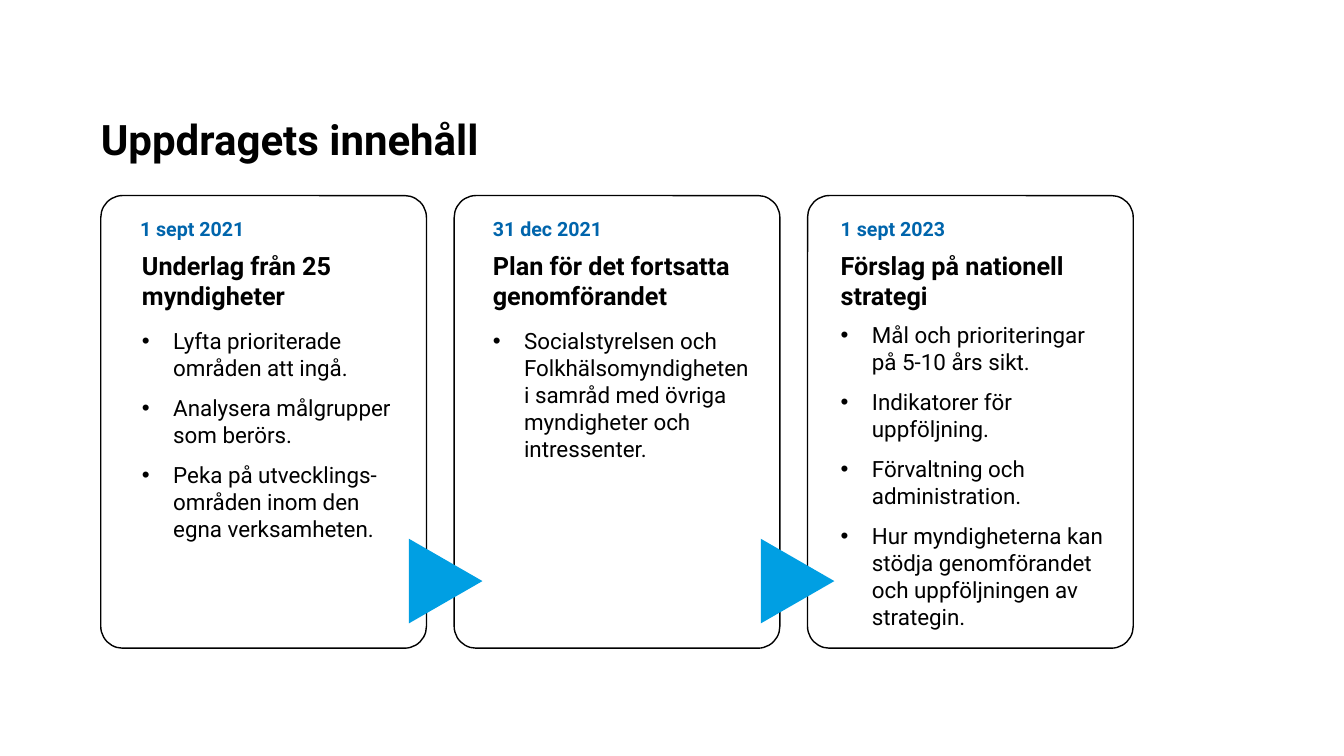
import pptx
import pptx.util
from lxml import etree
from pptx.dml.color import RGBColor
from pptx.enum.shapes import MSO_SHAPE
from pptx.enum.text import MSO_ANCHOR
from pptx.oxml.ns import qn
from pptx.util import Inches, Pt

# Content
TITLE = "Uppdragets innehåll"
STAGES = [
    {
        "date": "1 sept 2021", "date_left": 1.29,
        "heading": "Underlag från 25\nmyndigheter", "text_left": 1.31,
        "points": ["Lyfta prioriterade områden att ingå.",
                   "Analysera målgrupper som berörs.",
                   "Peka på utvecklings-områden inom den egna verksamheten."],
        "points_box": (3.2, 2.68, 2.3),
    },
    {
        "date": "31 dec 2021", "date_left": 4.79,
        "heading": "Plan för det fortsatta\ngenomförandet", "text_left": 4.79,
        "points": ["Socialstyrelsen och Folkhälsomyndigheten\n"
                   "i samråd med övriga myndigheter och intressenter."],
        "points_box": (3.2, 2.86, 1.45),
    },
    {
        "date": "1 sept 2023", "date_left": 8.24,
        "heading": "Förslag på nationell\nstrategi", "text_left": 8.24,
        "points": ["Mål och prioriteringar\npå 5-10 års sikt.",
                   "Indikatorer för uppföljning.",
                   "Förvaltning och administration.",
                   "Hur myndigheterna kan stödja genomförandet "
                   "och uppföljningen av strategin."],
        "points_box": (3.14, 3, 3.2),
    },
]

# Style
FONT = "Roboto"
BLACK = RGBColor(0x00, 0x00, 0x00)
DATE_BLUE = RGBColor(0x00, 0x65, 0xAC)
ARROW_BLUE = RGBColor(0x00, 0x9F, 0xE3)

# Layout in inches
CARD_LEFT, CARD_TOP, CARD_WIDTH, CARD_HEIGHT = 1, 1.94, 3.23, 4.49
CARD_STEP = 3.505
ARROW_LEFT, ARROW_TOP, ARROW_WIDTH, ARROW_HEIGHT = 4, 5.4, 0.84, 0.73
ARROW_STEP = 3.49
INDENT = 0.31


def add_text(slide, place, paragraphs, size, color=BLACK, bold=False, bullets=False):
    box = slide.shapes.add_textbox(*(Inches(length) for length in place))
    frame = box.text_frame
    frame.word_wrap = True
    for index, text in enumerate(paragraphs):
        para = frame.paragraphs[0] if index == 0 else frame.add_paragraph()
        para.text = text
        if bullets:
            add_bullet(para)
            if index:
                para.space_before = Pt(9.4)
        for span in para.runs:
            span.font.name = FONT
            span.font.size = Pt(size)
            span.font.bold = bold
            span.font.color.rgb = color
    return frame


def add_bullet(para):
    properties = para._p.get_or_add_pPr()
    properties.set("marL", str(Inches(INDENT)))
    properties.set("indent", str(-Inches(INDENT)))
    etree.SubElement(properties, qn("a:buFont")).set("typeface", "Arial")
    etree.SubElement(properties, qn("a:buChar")).set("char", "•")


def add_card(slide, left):
    card = slide.shapes.add_shape(
        MSO_SHAPE.ROUNDED_RECTANGLE, Inches(left), Inches(CARD_TOP),
        Inches(CARD_WIDTH), Inches(CARD_HEIGHT))
    card.adjustments[0] = 0.067
    card.shadow.inherit = False
    card.fill.background()
    card.line.color.rgb = BLACK
    card.line.width = Pt(1)


def add_arrow(slide, left):
    arrow = slide.shapes.add_shape(
        MSO_SHAPE.ISOSCELES_TRIANGLE, Inches(left), Inches(ARROW_TOP),
        Inches(ARROW_WIDTH), Inches(ARROW_HEIGHT))
    arrow.rotation = 90
    arrow.shadow.inherit = False
    arrow.fill.solid()
    arrow.fill.fore_color.rgb = ARROW_BLUE
    arrow.line.fill.background()


def main():
    deck = pptx.Presentation()
    deck.slide_width, deck.slide_height = Inches(13.33), Inches(7.5)
    slide = deck.slides.add_slide(deck.slide_layouts[6])

    # Title
    title = add_text(slide, (1, 0.63, 10, 1), [TITLE], 30, bold=True)
    title.vertical_anchor = MSO_ANCHOR.BOTTOM
    title.margin_left = title.margin_right = title.margin_top = title.margin_bottom = 0
    title.paragraphs[0].line_spacing = Pt(34)

    # Cards with date, heading and points
    for index, stage in enumerate(STAGES):
        add_card(slide, CARD_LEFT + index * CARD_STEP)
        left = stage["text_left"]
        top, width, height = stage["points_box"]
        add_text(slide, (left, top, width, height), stage["points"], 16, bullets=True)
        add_text(slide, (left, 2.43, 2.8, 0.71), stage["heading"].split("\n"), 18, bold=True)
        add_text(slide, (stage["date_left"], 2.1, 1.41, 0.34), [stage["date"]], 14,
                 DATE_BLUE, bold=True)

    # Arrows between the cards
    for index in range(len(STAGES) - 1):
        add_arrow(slide, ARROW_LEFT + index * ARROW_STEP)

    deck.save("out.pptx")


if __name__ == "__main__":
    main()
